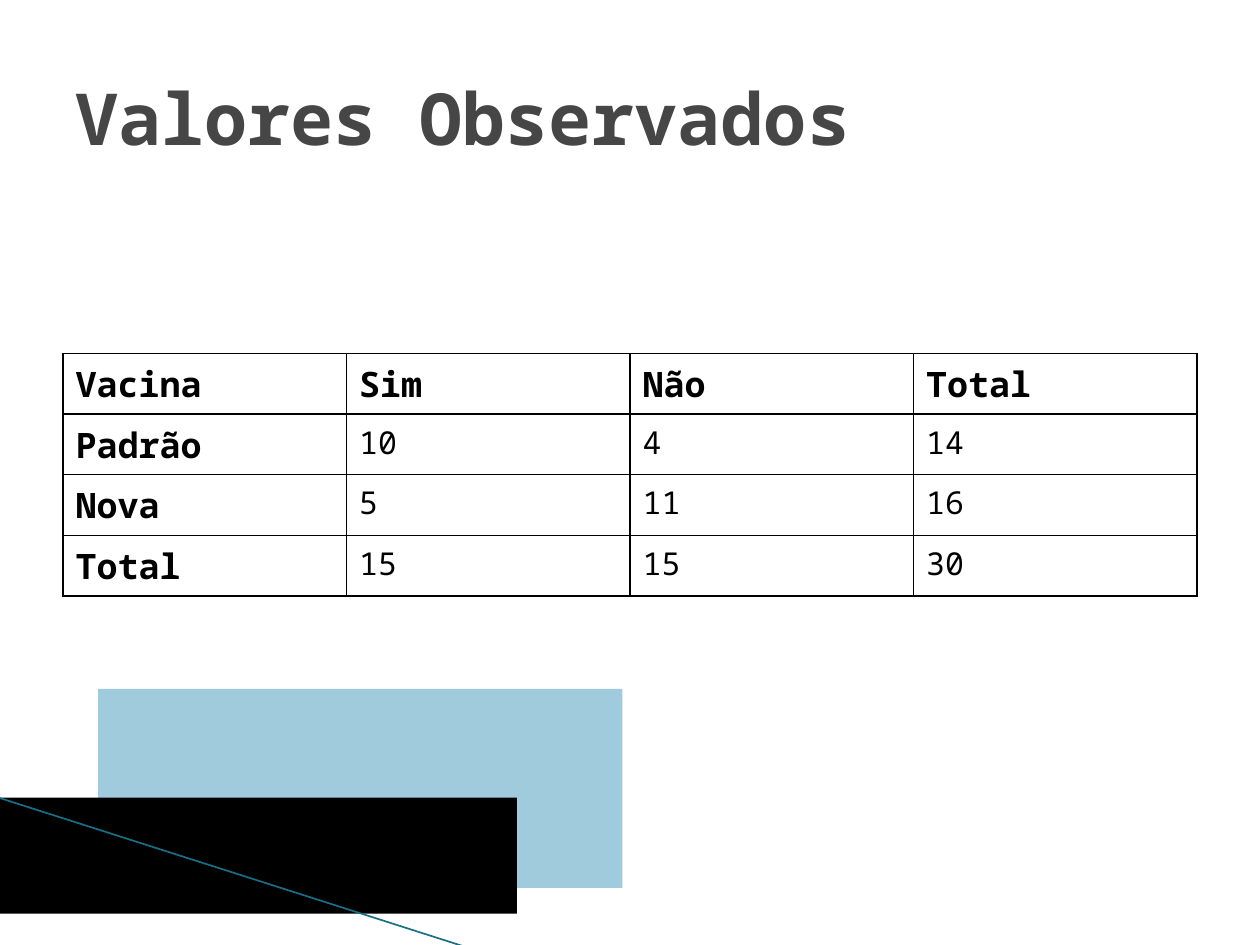
from dataclasses import dataclass

from lxml.etree import SubElement
from pptx import Presentation
from pptx.dml.color import RGBColor
from pptx.enum.shapes import MSO_CONNECTOR as Connector, MSO_SHAPE as Shape
from pptx.enum.text import MSO_ANCHOR as Anchor
from pptx.oxml.ns import qn
from pptx.util import Cm, Pt


@dataclass(frozen=True)
class Theme:
    font: str = "Noto Sans Mono"
    title_color: str = "464646"
    ink: str = "000000"
    pale_blue: str = "9FCBDC"
    teal: str = "196F85"
    title_size: float = 41
    heading_size: float = 20
    value_size: float = 18
    border_width: float = 1
    diagonal_width: float = 0.96


@dataclass(frozen=True)
class Band:
    left: float
    top: float
    width: float
    height: float
    color: str


THEME = Theme()
BANDS = [
    Band(1.98, 13.89, 10.57, 4.01, THEME.pale_blue),
    Band(-0.15, 16.08, 10.57, 2.34, THEME.ink),
]
OBSERVED = [
    ("Vacina", "Sim", "Não", "Total"),
    ("Padrão", "10", "4", "14"),
    ("Nova", "5", "11", "16"),
    ("Total", "15", "15", "30"),
]


def style_text(paragraph, size: float, color: str, bold: bool) -> None:
    for run in paragraph.runs:
        run.font.name = THEME.font
        run.font.size = Pt(size)
        run.font.bold = bold
        run.font.color.rgb = RGBColor.from_string(color)


def draw_band(slide, band: Band) -> None:
    block = slide.shapes.add_shape(
        Shape.RECTANGLE, Cm(band.left), Cm(band.top), Cm(band.width), Cm(band.height))
    block.shadow.inherit = False
    block.fill.solid()
    block.fill.fore_color.rgb = RGBColor.from_string(band.color)
    block.line.fill.background()


def draw_diagonal(slide) -> None:
    diagonal = slide.shapes.add_connector(
        Connector.STRAIGHT, Cm(-0.03), Cm(16.08), Cm(9.42), Cm(19.1))
    diagonal.line.color.rgb = RGBColor.from_string(THEME.teal)
    diagonal.line.width = Pt(THEME.diagonal_width)
    SubElement(diagonal._element.spPr, qn("a:effectLst"))


def draw_borders(cell) -> None:
    properties = cell._tc.get_or_add_tcPr()
    for position, side in enumerate(("a:lnL", "a:lnR", "a:lnT", "a:lnB")):
        border = SubElement(properties, qn(side), w=str(Pt(THEME.border_width)))
        fill = SubElement(border, qn("a:solidFill"))
        SubElement(fill, qn("a:srgbClr"), val=THEME.ink)
        # Borders come before the cell fill
        properties.insert(position, border)


def draw_table(slide, rows: list[tuple[str, ...]]) -> None:
    row_height = Cm(1.1)
    table = slide.shapes.add_table(
        len(rows), len(rows[0]), Cm(1.27), Cm(7.13), Cm(22.86), row_height * len(rows)).table
    table.first_row = table.horz_banding = False
    for r, row in enumerate(rows):
        table.rows[r].height = row_height
        for c, value in enumerate(row):
            cell = table.cell(r, c)
            cell.text_frame.text = value
            heading = r == 0 or c == 0
            size = THEME.heading_size if heading else THEME.value_size
            style_text(cell.text_frame.paragraphs[0], size, THEME.ink, heading)
            cell.fill.background()
            draw_borders(cell)


def draw_title(slide, wording: str) -> None:
    title = slide.shapes.add_textbox(Cm(1.27), Cm(0.76), Cm(22.86), Cm(3.18)).text_frame
    title.word_wrap = True
    title.vertical_anchor = Anchor.MIDDLE
    title.text = wording
    style_text(title.paragraphs[0], THEME.title_size, THEME.title_color, True)


def main() -> None:
    deck = Presentation()
    deck.slide_width, deck.slide_height = Cm(25.4), Cm(19.05)
    slide = deck.slides.add_slide(deck.slide_layouts[6])

    # Corner decoration
    for band in BANDS:
        draw_band(slide, band)
    draw_diagonal(slide)

    # Content
    draw_table(slide, OBSERVED)
    draw_title(slide, "Valores Observados")

    deck.save("out.pptx")


if __name__ == "__main__":
    main()
